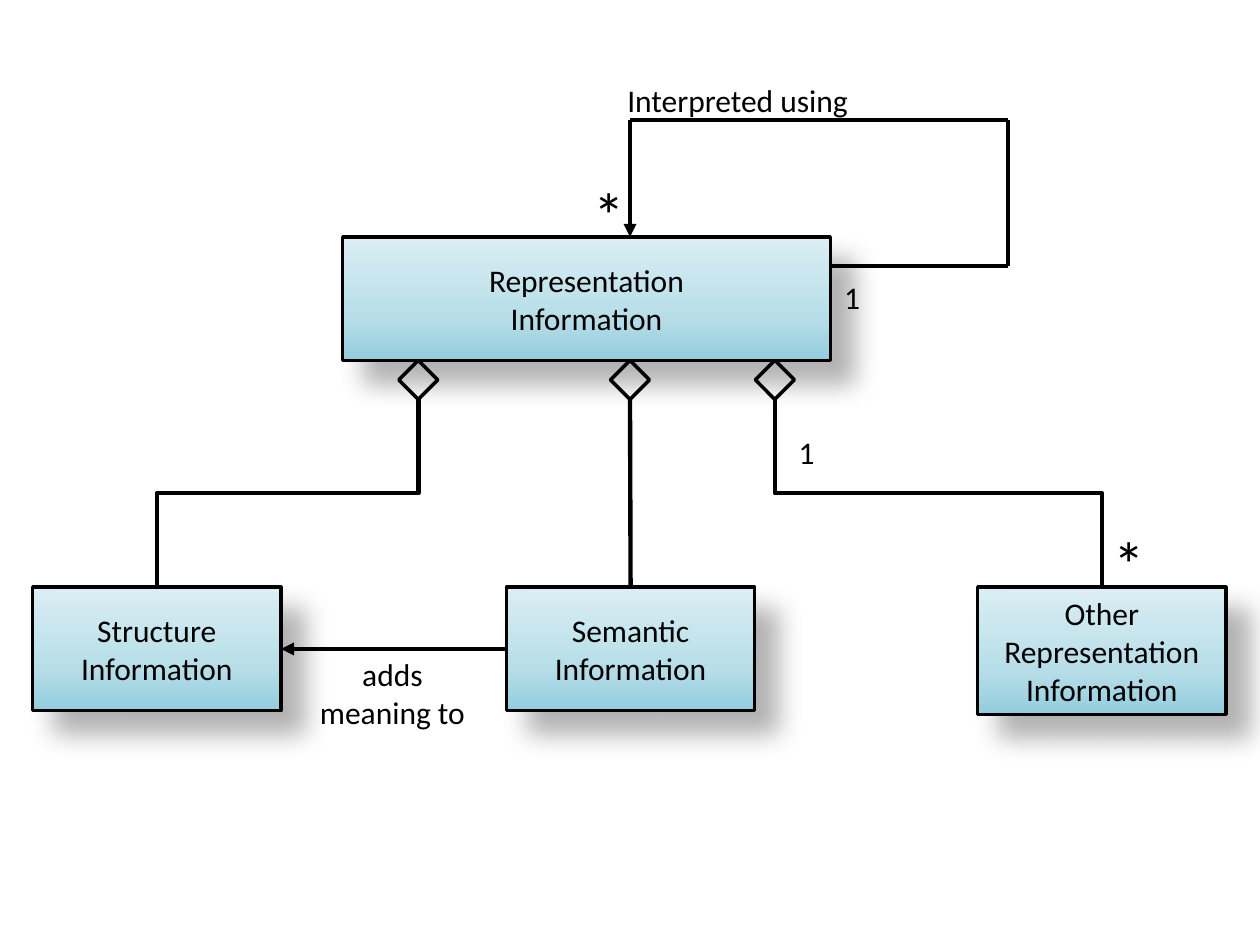
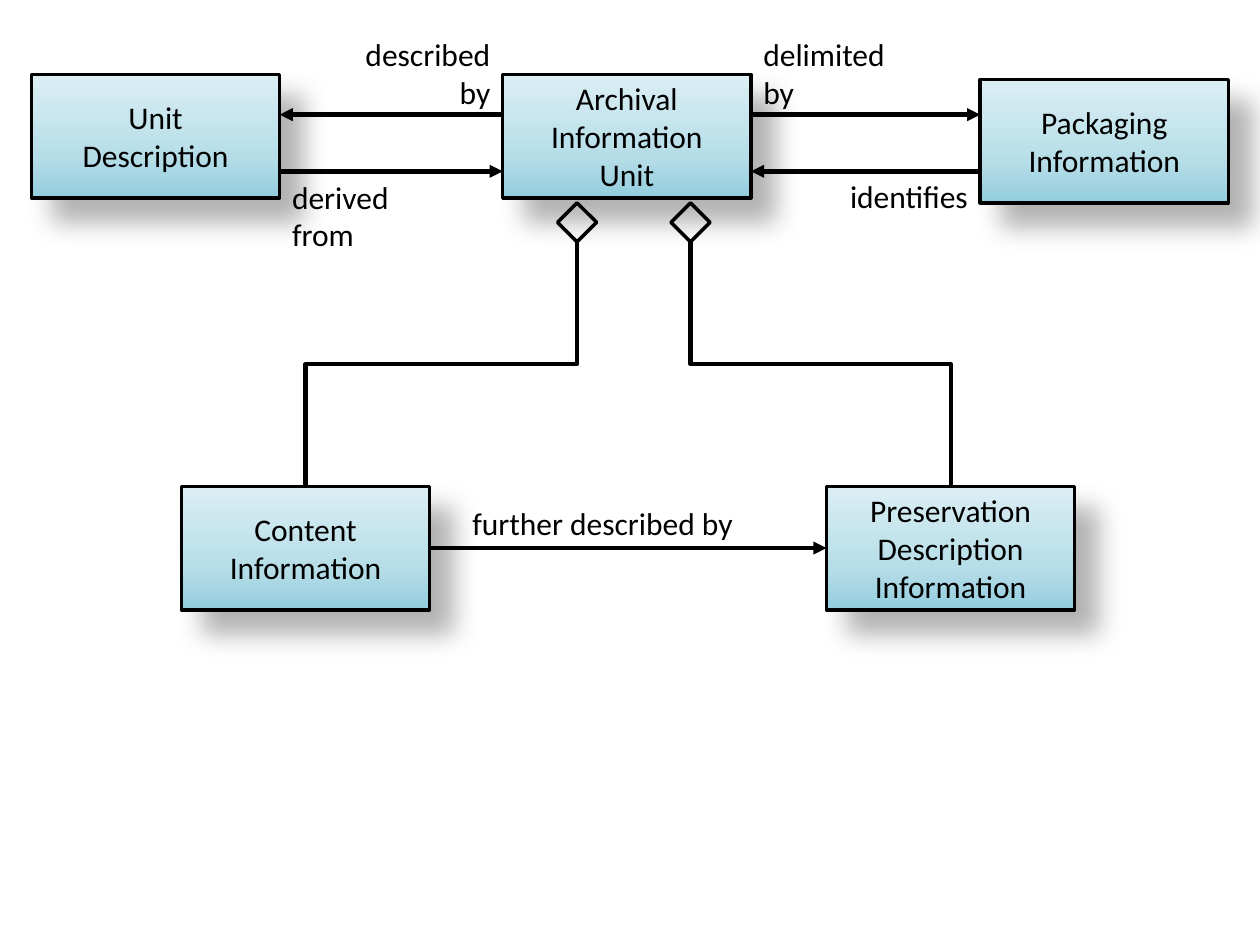
from dataclasses import dataclass

from lxml.etree import SubElement
from pptx import Presentation
from pptx.dml.color import RGBColor
from pptx.enum.shapes import MSO_CONNECTOR as Link, MSO_SHAPE as Shape
from pptx.enum.text import MSO_ANCHOR as Anchor, PP_ALIGN as Align
from pptx.oxml.ns import qn
from pptx.util import Inches, Pt


@dataclass(frozen=True)
class Theme:
    font: str = "Calibri"
    ink: str = "000000"
    blend: tuple = ((0, "93CDDD"), (35, "B7DEE8"), (100, "DBEEF4"))
    text: int = 18
    star: int = 36
    edge: float = 2
    wire: float = 2.5
    blur: int = 15
    drop: int = 18
    shade: int = 30


theme = Theme()
TOP, LEFT, BOTTOM, RIGHT = range(4)
WIDE, HIGH, GEM = 1.97, 0.98, 0.31

SLIDES = [
    {
        "boxes": {
            "rep": (["Representation", "Information"], 2.72, 1.88, 3.87, HIGH),
            "other": (["Other", "Representation", "Information"], 7.76, 4.66, WIDE, 1.01),
            "meaning": (["Semantic", "Information"], 4.02, 4.66, WIDE, HIGH),
            "struct": (["Structure", "Information"], 0.26, 4.66, WIDE, HIGH),
        },
        "gems": {"struct": (3.32, 2.86), "meaning": (5, 2.86), "other": (6.15, 2.86)},
        "joins": [("meaning", LEFT, "struct", RIGHT)],
        "lines": [
            ((6.6, 2.11), (8, 2.11), False),
            ((8, 2.11), (8, 0.95), False),
            ((8, 0.95), (5, 0.95), False),
            ((5, 0.95), (5, 1.88), True),
        ],
        "labels": [
            (["adds meaning to"], 2.33, 5.15, 1.57, 0.71, Align.CENTER, theme.text, 0.05),
            (["1"], 6.24, 3.39, 0.35, 0.4, Align.LEFT, theme.text, 0.05),
            (["*"], 8.74, 4.11, 0.35, 0.71, Align.LEFT, theme.star, 0.05),
            (["Interpreted using"], 4.88, 0.59, 2.51, 0.4, Align.LEFT, theme.text, 0.05),
            (["*"], 4.61, 1.34, 0.35, 0.71, Align.LEFT, theme.star, 0.05),
            (["1"], 6.6, 2.16, 0.35, 0.4, Align.LEFT, theme.text, 0.05),
        ],
    },
    {
        "boxes": {
            "unit": (["Archival Information", "Unit"], 3.99, 0.59, WIDE, HIGH),
            "keep": (["Preservation Description", "Information"], 6.56, 3.86, WIDE, HIGH),
            "content": (["Content Information"], 1.44, 3.86, WIDE, HIGH),
            "desc": (["Unit", "Description"], 0.25, 0.59, WIDE, HIGH),
            "pack": (["Packaging Information"], 7.78, 0.63, WIDE, HIGH),
        },
        "gems": {"keep": (5.48, 1.61), "content": (4.58, 1.61)},
        "joins": [("content", RIGHT, "keep", LEFT)],
        "lines": [
            ((2.22, 1.36), (3.99, 1.36), True),
            ((3.99, 0.91), (2.22, 0.91), True),
            ((5.96, 0.91), (7.78, 0.91), True),
            ((7.78, 1.36), (5.96, 1.36), True),
        ],
        "labels": [
            (["further described by"], 3.65, 3.95, 2.69, 0.4, Align.LEFT, theme.text, 0.05),
            (["derived", "from"], 2.22, 1.36, 1.77, 0.71, Align.LEFT, theme.text, 0.05),
            (["described", "by"], 2.22, 0.28, 1.77, 0.66, Align.RIGHT, theme.text, 0),
            (["delimited", "by"], 5.96, 0.28, 1.82, 0.66, Align.LEFT, theme.text, 0),
            (["identifies"], 5.96, 1.36, 1.82, 0.4, Align.RIGHT, theme.text, 0.05),
        ],
    },
]


def color(code):
    return RGBColor.from_string(code)


def write(frame, rows, align, size):
    frame.word_wrap = True
    for i, row in enumerate(rows):
        para = frame.paragraphs[0] if i == 0 else frame.add_paragraph()
        para.alignment = align
        run = para.add_run()
        run.text = row
        run.font.name = theme.font
        run.font.size = Pt(size)
        run.font.color.rgb = color(theme.ink)


def tint(parent, code, alpha=None):
    node = SubElement(parent, qn("a:srgbClr"), val=code)
    if alpha is not None:
        SubElement(node, qn("a:alpha"), val=str(alpha * 1000))


def outline(shape, width):
    shape.line.color.rgb = color(theme.ink)
    shape.line.width = Pt(width)


def add_box(slide, rows, *place):
    box = slide.shapes.add_shape(Shape.RECTANGLE, *map(Inches, place))
    box.fill.gradient()
    box.fill.gradient_angle = 90
    props = box._element.spPr
    stops = props.find(".//" + qn("a:gsLst"))
    for stop in list(stops):
        stops.remove(stop)
    for pos, code in theme.blend:
        tint(SubElement(stops, qn("a:gs"), pos=str(pos * 1000)), code)
    outline(box, theme.edge)
    box.shadow.inherit = False
    cast = SubElement(
        props.find(qn("a:effectLst")), qn("a:outerShdw"),
        blurRad=str(Pt(theme.blur)), dist=str(Pt(theme.drop)),
        dir=str(45 * 60000), algn="tl", rotWithShape="0")
    tint(cast, theme.ink, theme.shade)
    box.text_frame.vertical_anchor = Anchor.MIDDLE
    write(box.text_frame, rows, Align.CENTER, theme.text)
    return box


def add_gem(slide, mid, top):
    gem = slide.shapes.add_shape(
        Shape.DIAMOND, *map(Inches, (mid - GEM / 2, top, GEM, GEM)))
    gem.fill.background()
    outline(gem, theme.edge)
    gem.shadow.inherit = False
    return gem


def add_line(slide, start=(0, 0), end=(0, 0), arrow=False, kind=Link.STRAIGHT):
    line = slide.shapes.add_connector(kind, *map(Inches, (*start, *end)))
    outline(line, theme.wire)
    if arrow:
        SubElement(line.line._get_or_add_ln(), qn("a:tailEnd"), type="triangle")
    SubElement(line._element.spPr, qn("a:effectLst"))
    return line


def join(line, first, side, last, other):
    line.begin_connect(first, side)
    line.end_connect(last, other)


def add_bend(slide, gem, box):
    line = add_line(slide, kind=Link.ELBOW)
    join(line, gem, BOTTOM, box, TOP)
    x1, y1, x2, y2 = line.begin_x, line.begin_y, line.end_x, line.end_y
    wide, high = y2 - y1, abs(x2 - x1)
    line.left, line.top = (x1 + x2 - wide) // 2, (y1 + y2 - high) // 2
    line.width, line.height = wide, high
    frame = line._element.spPr.find(qn("a:xfrm"))
    for flip in ("flipH", "flipV"):
        frame.attrib.pop(flip, None)
    if x2 > x1:
        frame.set("flipH", "1")
    frame.set("rot", str((270 if x2 > x1 else 90) * 60000))


def add_label(slide, rows, x, y, w, h, align, size, inset):
    label = slide.shapes.add_textbox(*map(Inches, (x, y, w, h)))
    label.text_frame.margin_top = Inches(inset)
    write(label.text_frame, rows, align, size)


def draw(slide, data):
    boxes = {name: add_box(slide, *box) for name, box in data["boxes"].items()}
    for name, spot in data["gems"].items():
        gem, box = add_gem(slide, *spot), boxes[name]
        if abs(gem.left + gem.width / 2 - box.left - box.width / 2) < Inches(0.05):
            join(add_line(slide), gem, BOTTOM, box, TOP)
        else:
            add_bend(slide, gem, box)
    for first, side, last, other in data["joins"]:
        join(add_line(slide, arrow=True), boxes[first], side, boxes[last], other)
    for line in data["lines"]:
        add_line(slide, *line)
    for label in data["labels"]:
        add_label(slide, *label)


def main():
    deck = Presentation()
    deck.slide_width, deck.slide_height = Inches(10), Inches(7.5)
    for data in SLIDES:
        draw(deck.slides.add_slide(deck.slide_layouts[6]), data)
    deck.save("out.pptx")


if __name__ == "__main__":
    main()
